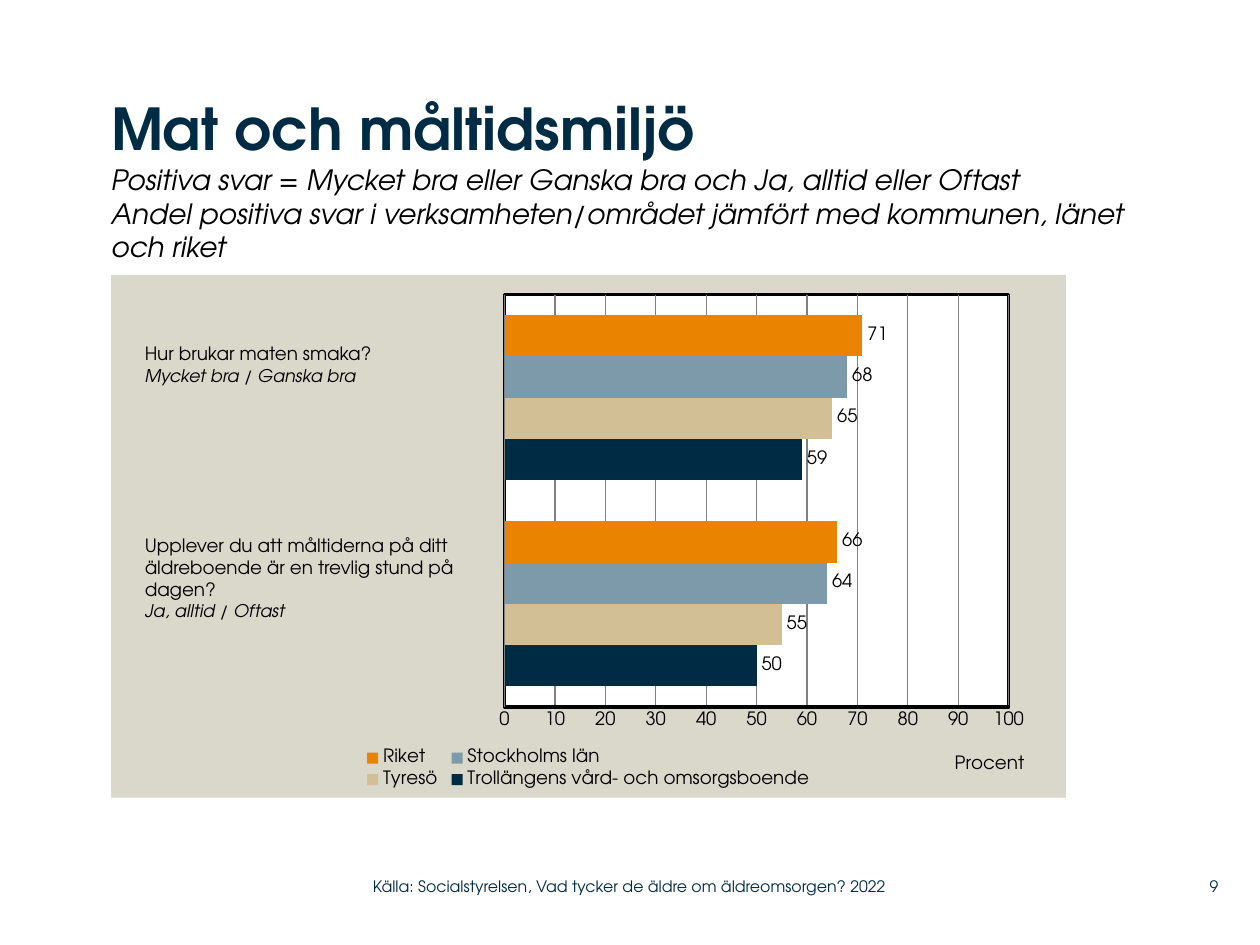
import pptx
import pptx.chart.data
import pptx.dml.color
import pptx.enum.chart
import pptx.enum.text
import pptx.oxml
import pptx.util
from dataclasses import dataclass

Cm = pptx.util.Cm
Pt = pptx.util.Pt


@dataclass(frozen=True)
class Theme:
    font: str = "TeX Gyre Adventor"
    navy: str = "002B45"
    sand: str = "D3BF96"
    blue: str = "7D9AAA"
    orange: str = "E98300"
    panel: str = "DAD7CB"
    white: str = "FFFFFF"
    black: str = "000000"
    grid: str = "808080"
    title_size: float = 33
    subtitle_size: float = 16
    body_size: float = 10.5
    answer_size: float = 10
    footer_size: float = 9


THEME = Theme()

TITLE = "Mat och måltidsmiljö"
SUBTITLES = [
    "Positiva svar = Mycket bra eller Ganska bra och Ja, alltid eller Oftast",
    "Andel positiva svar i verksamheten/området jämfört med kommunen, länet och riket",
]
CATEGORIES = ["1", "2"]
SERIES = [
    ("Trollängens vård- och omsorgsboende", (50, 59), THEME.navy),
    ("Tyresö", (55, 65), THEME.sand),
    ("Stockholms län", (64, 68), THEME.blue),
    ("Riket", (66, 71), THEME.orange),
]
AXIS_TITLE = "Procent"
# Top and height in cm, question lines, positive answers
QUESTIONS = [
    (6.78, 1.6, ["Hur brukar maten smaka?"], "Mycket bra / Ganska bra"),
    (10.64, 2.49,
     ["Upplever du att måltiderna på ditt äldreboende är en trevlig stund på", "dagen?"],
     "Ja, alltid / Oftast"),
]
# Left and width in cm, text, alignment
FOOTERS = [
    (7.52, 11.25, "Källa: Socialstyrelsen, Vad tycker de äldre om äldreomsorgen? 2022",
     pptx.enum.text.PP_ALIGN.LEFT),
    (23.37, 1.19, "9", pptx.enum.text.PP_ALIGN.RIGHT),
]


def color(value):
    return pptx.dml.color.RGBColor.from_string(value)


def style(font, size, text_color=THEME.black, bold=False, italic=False):
    font.name = THEME.font
    font.size = Pt(size)
    font.color.rgb = color(text_color)
    font.bold = bold
    font.italic = italic


def add_text_frame(slide, left, top, width, height, inset=True):
    frame = slide.shapes.add_textbox(Cm(left), Cm(top), Cm(width), Cm(height)).text_frame
    frame.word_wrap = True
    if not inset:
        frame.margin_left = frame.margin_right = frame.margin_top = frame.margin_bottom = 0
    return frame


def add_title(slide):
    paragraph = add_text_frame(slide, 2.24, 1.88, 21.39, 3.66, inset=False).paragraphs[0]
    run = paragraph.add_run()
    run.text = TITLE
    style(run.font, THEME.title_size, THEME.navy, bold=True)
    for subtitle in SUBTITLES:
        paragraph.add_line_break()
        run = paragraph.add_run()
        run.text = subtitle
        style(run.font, THEME.subtitle_size, italic=True)


def manual_layout(x, y, width=None, height=None, inner=False):
    """Return a c:layout element placed in fractions of the chart."""
    values = [("xMode", "edge"), ("yMode", "edge"), ("x", x), ("y", y)]
    if inner:
        values.insert(0, ("layoutTarget", "inner"))
    if width is not None:
        values += [("w", width), ("h", height)]
    children = "".join(f'<c:{name} val="{value}"/>' for name, value in values)
    return pptx.oxml.parse_xml(
        '<c:layout xmlns:c="http://schemas.openxmlformats.org/drawingml/2006/chart">'
        f"<c:manualLayout>{children}</c:manualLayout></c:layout>")


def set_layout(element, layout, after=None):
    """Replace the layout, putting it after the named child or first."""
    for old in element.xpath("c:layout"):
        element.remove(old)
    if after:
        element.xpath(after)[0].addnext(layout)
    else:
        element.insert(0, layout)


def shape_properties(fill, line=None):
    outline = "<a:ln><a:noFill/></a:ln>"
    if line:
        outline = (f'<a:ln w="{Pt(2)}"><a:solidFill><a:srgbClr val="{line}"/>'
                   "</a:solidFill></a:ln>")
    return pptx.oxml.parse_xml(
        '<c:spPr xmlns:c="http://schemas.openxmlformats.org/drawingml/2006/chart" '
        'xmlns:a="http://schemas.openxmlformats.org/drawingml/2006/main">'
        f'<a:solidFill><a:srgbClr val="{fill}"/></a:solidFill>{outline}</c:spPr>')


def add_bar_chart(slide):
    data = pptx.chart.data.CategoryChartData()
    data.categories = CATEGORIES
    for name, values, _ in SERIES:
        data.add_series(name, values)
    chart = slide.shapes.add_chart(
        pptx.enum.chart.XL_CHART_TYPE.BAR_CLUSTERED,
        Cm(2.24), Cm(5.54), Cm(19.25), Cm(10.54), data).chart
    style(chart.font, THEME.body_size)
    chart.has_title = False

    plot = chart.plots[0]
    plot.gap_width = 100
    plot.overlap = 0
    plot.vary_by_categories = False
    for series, (_, _, fill) in zip(plot.series, SERIES):
        series.format.fill.solid()
        series.format.fill.fore_color.rgb = color(fill)
        series.data_labels.show_value = True
        series.data_labels.position = pptx.enum.chart.XL_LABEL_POSITION.OUTSIDE_END
        style(series.data_labels.font, THEME.body_size)

    chart.category_axis.visible = False
    axis = chart.value_axis
    axis.minimum_scale, axis.maximum_scale, axis.major_unit = 0, 100, 10
    axis.major_tick_mark = pptx.enum.chart.XL_TICK_MARK.NONE
    axis.format.line.color.rgb = color(THEME.black)
    axis.format.line.width = Pt(2)
    axis.has_major_gridlines = True
    axis.major_gridlines.format.line.color.rgb = color(THEME.grid)
    axis.major_gridlines.format.line.width = Pt(0.75)
    style(axis.tick_labels.font, THEME.body_size)
    paragraph = axis.axis_title.text_frame.paragraphs[0]
    paragraph.text = AXIS_TITLE
    style(paragraph.font, THEME.body_size)

    chart.has_legend = True
    legend = chart.legend
    legend.position = pptx.enum.chart.XL_LEGEND_POSITION.BOTTOM
    legend.include_in_layout = False
    style(legend.font, THEME.body_size)

    chart_space = chart.element
    plot_area = chart_space.xpath("c:chart/c:plotArea")[0]
    set_layout(plot_area, manual_layout(0.412, 0.038, 0.528, 0.789, inner=True))
    set_layout(plot_area.xpath("c:valAx/c:title")[0], manual_layout(0.88, 0.91), "c:tx")
    set_layout(chart_space.xpath("c:chart/c:legend")[0],
               manual_layout(0.26, 0.9, 0.48, 0.09), "c:legendPos")
    plot_area.append(shape_properties(THEME.white, THEME.black))
    chart_space.xpath("c:chart")[0].addnext(shape_properties(THEME.panel))


def add_questions(slide):
    for top, height, lines, answers in QUESTIONS:
        frame = add_text_frame(slide, 2.67, top, 7.04, height)
        frame.text = "\n".join([*lines, answers])
        for paragraph in frame.paragraphs[:-1]:
            style(paragraph.font, THEME.body_size)
        style(frame.paragraphs[-1].font, THEME.answer_size, italic=True)


def add_footers(slide):
    for left, width, text, alignment in FOOTERS:
        frame = add_text_frame(slide, left, 17.5, width, 0.74, inset=False)
        frame.vertical_anchor = pptx.enum.text.MSO_ANCHOR.MIDDLE
        paragraph = frame.paragraphs[0]
        paragraph.text = text
        paragraph.alignment = alignment
        style(paragraph.font, THEME.footer_size, THEME.navy)


def main():
    presentation = pptx.Presentation()
    presentation.slide_width, presentation.slide_height = Cm(25.4), Cm(19.05)
    slide = presentation.slides.add_slide(presentation.slide_layouts[6])
    add_title(slide)
    add_bar_chart(slide)
    add_questions(slide)
    add_footers(slide)
    presentation.save("out.pptx")


if __name__ == "__main__":
    main()
